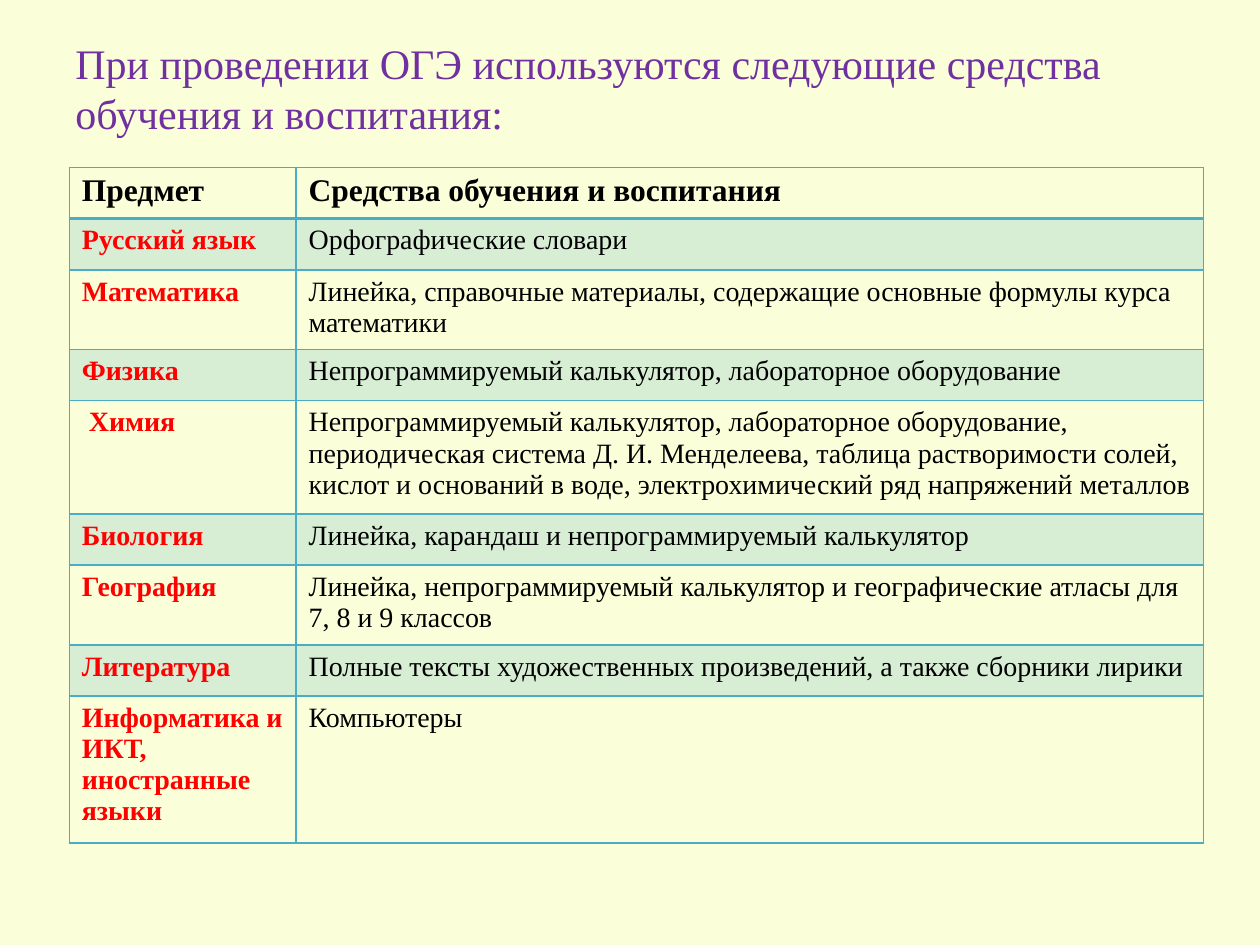
from lxml import etree
from pptx import Presentation
from pptx import util as u
from pptx.dml.color import RGBColor
from pptx.enum import text
from pptx.oxml.ns import qn

TITLE = "При проведении ОГЭ используются следующие средства обучения и воспитания:"
HEADER = ("Предмет", "Средства обучения и воспитания")
SUBJECTS = [
    ("Русский язык", "Орфографические словари"),
    ("Математика", "Линейка, справочные материалы, содержащие основные формулы курса математики"),
    ("Физика", "Непрограммируемый калькулятор, лабораторное оборудование"),
    (" Химия", "Непрограммируемый калькулятор, лабораторное оборудование, "
               "периодическая система Д. И. Менделеева, таблица растворимости солей, "
               "кислот и оснований в воде, электрохимический ряд напряжений металлов"),
    ("Биология", "Линейка, карандаш и непрограммируемый калькулятор"),
    ("География", "Линейка, непрограммируемый калькулятор и географические атласы для 7, 8 и 9 классов"),
    ("Литература", "Полные тексты художественных произведений, а также сборники лирики"),
    ("Информатика и ИКТ, иностранные языки", "Компьютеры"),
]

THEME = {
    "font": "Times New Roman",
    "background": "FAFFD9", "title": "7030A0", "subject": "FF0000",
    "body": "000000", "accent": "4BACC6",
    "title_size": 24, "header_size": 18, "body_size": 16,
    "band_opacity": 20, "line": 1, "header_line": 2,
}
TITLE_BOX = (36, 21.6, 648, 56.9)
TABLE_LEFT, TABLE_TOP = 39.6, 95.76
COLUMN_WIDTHS = (129.6, 518.4)
ROW_HEIGHT = 29.2


def style_text(para, size, color, bold=False):
    para.font.name = THEME["font"]
    para.font.size = u.Pt(size)
    para.font.bold = bold
    para.font.color.rgb = RGBColor.from_string(THEME[color])


def set_borders(cell, widths):
    """Draw left, right, top and bottom edges with the given widths in points."""
    properties = cell._tc.get_or_add_tcPr()
    for index, (side, width) in enumerate(zip("LRTB", widths)):
        line = etree.Element(qn(f"a:ln{side}"), w=str(u.Pt(width)))
        fill = etree.SubElement(line, qn("a:solidFill"))
        etree.SubElement(fill, qn("a:srgbClr"), val=THEME["accent"])
        properties.insert(index, line)


def fill_band(cell):
    """Fill the cell with the translucent accent colour."""
    cell.fill.solid()
    cell.fill.fore_color.rgb = RGBColor.from_string(THEME["accent"])
    color = cell._tc.tcPr.find(f"{qn('a:solidFill')}/{qn('a:srgbClr')}")
    etree.SubElement(color, qn("a:alpha"), val=str(THEME["band_opacity"] * 1000))


def add_title(page):
    box = page.shapes.add_textbox(*map(u.Pt, TITLE_BOX))
    frame = box.text_frame
    frame.word_wrap = True
    frame.vertical_anchor = text.MSO_ANCHOR.MIDDLE
    frame.text = TITLE
    style_text(frame.paragraphs[0], THEME["title_size"], "title")


def add_subject_table(page):
    rows = [HEADER, *SUBJECTS]
    table = page.shapes.add_table(
        len(rows), len(COLUMN_WIDTHS), u.Pt(TABLE_LEFT), u.Pt(TABLE_TOP),
        u.Pt(sum(COLUMN_WIDTHS)), u.Pt(ROW_HEIGHT * len(rows))).table
    table.horz_banding = False
    for column, width in zip(table.columns, COLUMN_WIDTHS):
        column.width = u.Pt(width)
    line, header_line = THEME["line"], THEME["header_line"]
    for r, row in enumerate(rows):
        table.rows[r].height = u.Pt(ROW_HEIGHT)
        for c, wording in enumerate(row):
            cell = table.cell(r, c)
            cell.text = wording
            is_header, is_subject = r == 0, c == 0
            style_text(
                cell.text_frame.paragraphs[0],
                THEME["header_size" if is_header else "body_size"],
                "subject" if is_subject and not is_header else "body",
                bold=is_header or is_subject)
            if r % 2:
                fill_band(cell)
            else:
                cell.fill.background()
            set_borders(cell, (line, line, header_line if r == 1 else line,
                               header_line if is_header else line))


def main():
    deck = Presentation()
    deck.slide_width, deck.slide_height = u.Pt(720), u.Pt(540)
    page = deck.slides.add_slide(deck.slide_layouts[6])
    page.background.fill.solid()
    page.background.fill.fore_color.rgb = RGBColor.from_string(THEME["background"])
    add_title(page)
    add_subject_table(page)
    deck.save("out.pptx")


if __name__ == "__main__":
    main()
